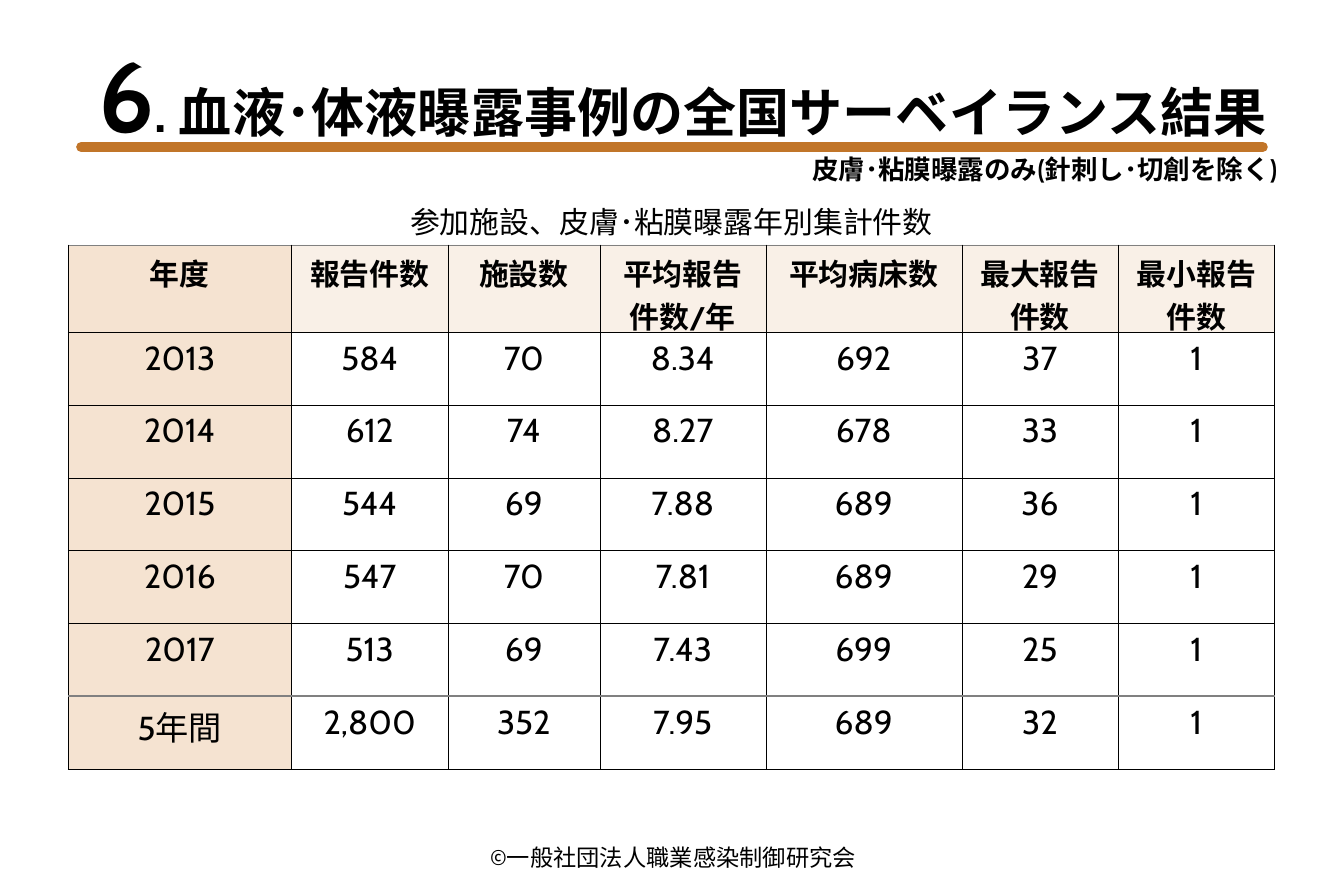
from lxml import etree
from pptx import Presentation, util as u
from pptx.dml.color import RGBColor
from pptx.enum import shapes, text
from pptx.oxml import ns

BLACK = RGBColor(0x00, 0x00, 0x00)
GREY = RGBColor(0x80, 0x80, 0x80)
SAND = RGBColor(0xF5, 0xE3, 0xD1)
OCHRE = RGBColor(0xC1, 0x75, 0x29)
FONT = "Cabin"
CENTER, RIGHT = text.PP_ALIGN.CENTER, text.PP_ALIGN.RIGHT

# Rule as (colour, width in points)
THIN, CAPTION_RULE, TOTAL_RULE = (BLACK, 0.23), (GREY, 0.5), (GREY, 1.47)

# Shares of the slide's width and height, in percent
COLUMN_SHARES = [16.62, 11.64, 11.29, 12.36, 14.58, 11.64, 11.64]
ROW_SHARES = [5.87, 9.73] + [8.13] * 6

CAPTION = "参加施設、皮膚･粘膜曝露年別集計件数"
HEADERS = ["年度", "報告件数", "施設数", "平均報告件数/年",
           "平均病床数", "最大報告件数", "最小報告件数"]
RESULTS = [
    ["2013", "584", "70", "8.34", "692", "37", "1"],
    ["2014", "612", "74", "8.27", "678", "33", "1"],
    ["2015", "544", "69", "7.88", "689", "36", "1"],
    ["2016", "547", "70", "7.81", "689", "29", "1"],
    ["2017", "513", "69", "7.43", "699", "25", "1"],
    ["5年間", "2,800", "352", "7.95", "689", "32", "1"],
]


def across(percent):
    return u.Inches(11.25 * percent / 100)


def down(percent):
    return u.Inches(7.5 * percent / 100)


def style(para, align, size=None, bold=False):
    para.alignment = align
    para.font.name = FONT
    para.font.bold = bold
    para.font.color.rgb = BLACK
    if size:
        para.font.size = u.Pt(size)


def add_text(page, left, top, width, height):
    box = page.shapes.add_textbox(across(left), down(top), across(width), down(height))
    box.text_frame.word_wrap = True
    return box.text_frame


def add_title(page):
    frame = add_text(page, 4.09, 3.07, 91.82, 18.13)
    heading = frame.paragraphs[0]
    for words, size in ((" 6", 60), (". 血液･体液曝露事例の全国サーベイランス結果", 32)):
        span = heading.add_run()
        span.text = words
        span.font.size = u.Pt(size)
    style(heading, CENTER, bold=True)
    scope = frame.add_paragraph()
    scope.text = "皮膚･粘膜曝露のみ(針刺し･切創を除く)"
    style(scope, RIGHT, 16, bold=True)


def add_underline(page):
    line = page.shapes.add_connector(
        shapes.MSO_CONNECTOR.STRAIGHT, across(6.04), down(16.4), across(93.96), down(16.4))
    line.line.color.rgb = OCHRE
    line.line.width = u.Pt(6)
    properties = line._element.spPr
    properties.find(ns.qn("a:ln")).set("cap", "rnd")
    etree.SubElement(properties, ns.qn("a:effectLst"))


def set_borders(cell, left, right, top, bottom):
    """Draw the four sides of a cell; None leaves a side bare."""
    properties = cell._tc.get_or_add_tcPr()
    sides = zip(("a:lnL", "a:lnR", "a:lnT", "a:lnB"), (left, right, top, bottom))
    for place, (tag, rule) in enumerate(sides):
        border = etree.Element(ns.qn(tag))
        if rule:
            colour, width = rule
            border.set("w", str(u.Pt(width)))
            fill = etree.SubElement(border, ns.qn("a:solidFill"))
            etree.SubElement(fill, ns.qn("a:srgbClr"), val=str(colour))
        else:
            etree.SubElement(border, ns.qn("a:noFill"))
        properties.insert(place, border)


def fill_cell(cell, words, size, bold=False, colour=None, opacity=100):
    cell.text = words
    cell.margin_bottom = 0
    style(cell.text_frame.paragraphs[0], CENTER, size, bold)
    if colour is None:
        cell.fill.background()
        return
    cell.fill.solid()
    cell.fill.fore_color.rgb = colour
    if opacity < 100:
        tint = cell._tc.tcPr.find(".//" + ns.qn("a:srgbClr"))
        etree.SubElement(tint, ns.qn("a:alpha"), val=str(opacity * 1000))


def add_results(page):
    table = page.shapes.add_table(
        len(ROW_SHARES), len(COLUMN_SHARES), across(5.07), down(21.47),
        across(sum(COLUMN_SHARES)), down(sum(ROW_SHARES))).table
    table.first_row = table.horz_banding = False
    for column, share in zip(table.columns, COLUMN_SHARES):
        column.width = across(share)
    for row, share in zip(table.rows, ROW_SHARES):
        row.height = down(share)

    table.cell(0, 0).merge(table.cell(0, len(HEADERS) - 1))
    fill_cell(table.cell(0, 0), CAPTION, 18)
    for c, words in enumerate(HEADERS):
        set_borders(table.cell(0, c), None, None, None, CAPTION_RULE)
        fill_cell(table.cell(1, c), words, 18, True, SAND, 50 if c else 100)

    for r, values in enumerate(RESULTS, 2):
        for c, value in enumerate(values):
            fill_cell(table.cell(r, c), value, 20, colour=None if c else SAND)

    total = len(ROW_SHARES) - 1
    rules = {1: CAPTION_RULE, total: TOTAL_RULE}
    for r in range(1, total + 1):
        for c in range(len(HEADERS)):
            set_borders(table.cell(r, c), THIN, THIN,
                        rules.get(r, THIN), rules.get(r + 1, THIN))


def add_copyright(page):
    para = add_text(page, 25.07, 93.47, 50.04, 4.4).paragraphs[0]
    para.text = "©一般社団法人職業感染制御研究会"
    style(para, CENTER, 14)


def main():
    deck = Presentation()
    deck.slide_width, deck.slide_height = across(100), down(100)
    page = deck.slides.add_slide(deck.slide_layouts[6])
    add_copyright(page)
    add_title(page)
    add_results(page)
    add_underline(page)
    deck.save("out.pptx")


if __name__ == "__main__":
    main()
